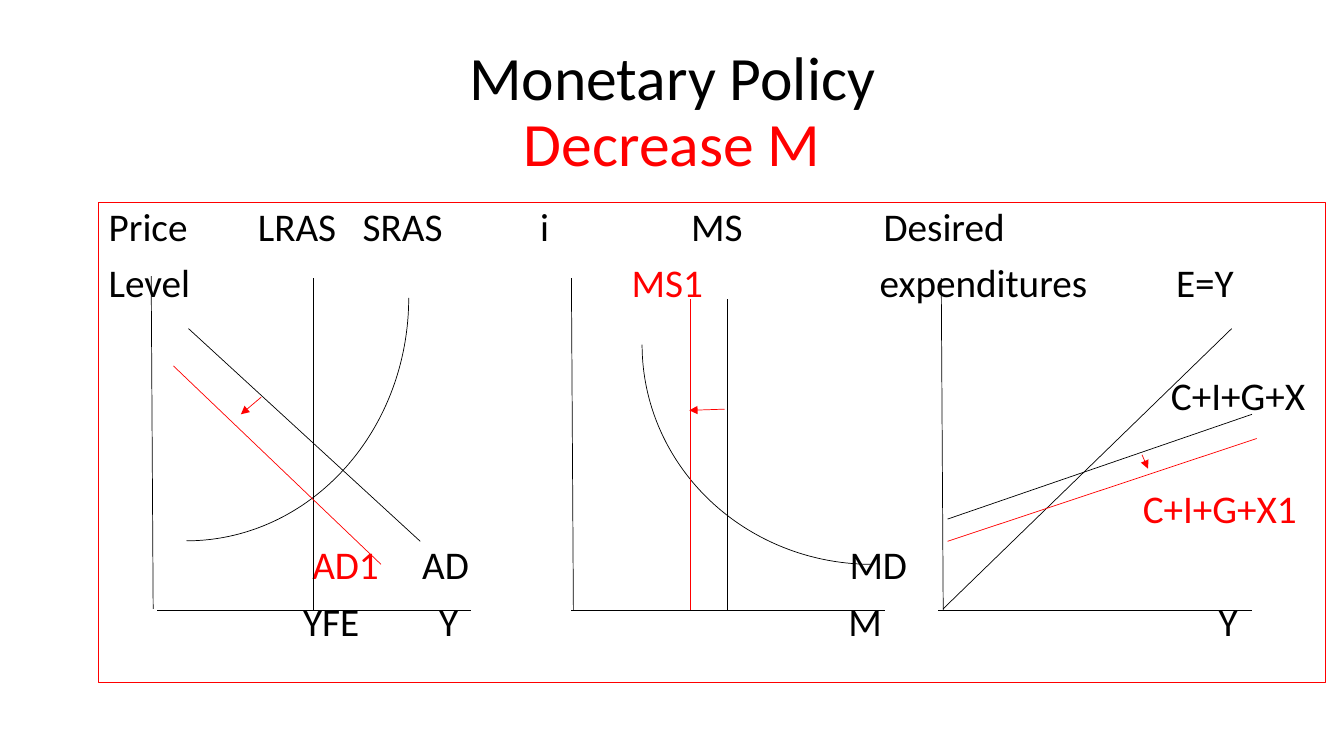
from lxml.etree import SubElement
from pptx import Presentation
from pptx.dml.color import RGBColor
from pptx.enum.shapes import MSO_CONNECTOR as Link, MSO_SHAPE as Kind
from pptx.enum.text import MSO_ANCHOR as Anchor, PP_ALIGN as Align
from pptx.oxml.ns import qn
from pptx.util import Cm, Pt

BLACK, RED, WHITE = "000000", "FF0000", "FFFFFF"
BASE = 15.39

ROWS = [
    (10, [(0, "Price", BLACK), (3.76, "LRAS", BLACK), (6.4, "SRAS", BLACK),
          (10.87, "i", BLACK), (14.68, "MS", BLACK), (19.53, "Desired", BLACK)]),
    (10, [(0, "Level", BLACK), (13.18, "MS1", RED),
          (19.43, "expenditures", BLACK), (26.9, "E=Y", BLACK)]),
    (50.3, [(26.77, "C+I+G+X", BLACK)]),
    (50.3, [(26.06, "C+I+G+X1", RED)]),
    (10, [(5.13, "AD1", RED), (7.9, "AD", BLACK), (18.67, "MD", BLACK)]),
    (10, [(4.9, "YFE", BLACK), (8.33, "Y", BLACK),
          (18.64, "M", BLACK), (27.97, "Y", BLACK)]),
]

AXES = [
    (3.81, 6.96, 3.86, 15.34), (14.4, 7.01, 14.45, BASE),
    (23.72, 7.01, 23.77, BASE),
    *[(left, BASE, left + 7.9, BASE) for left in (3.96, 14.4, 23.65)],
]
CURVES = [
    (7.9, 7.01, 7.9, BASE), (4.75, 8.28, 10.59, 13.64),
    (18.34, 7.54, 18.34, 15.37), (23.77, 15.34, 31.04, 8.28),
    (23.88, 13.08, 31.55, 10.44),
]
SHIFTED = [
    (4.37, 9.22, 9.6, 14.22), (23.88, 13.64, 31.67, 11.05),
    (17.4, 7.54, 17.4, 15.37),
]
ARROWS = [
    (6.58, 10.01, 6.07, 10.44), (18.26, 10.31, 17.37, 10.34),
    (28.78, 11.46, 28.93, 11.81),
]
ARCS = [(-1.42, 1.91, 12.24, 11.2, 90), (16.18, 3.15, 11.58, 11.07, 180)]


def paint(color, tone):
    color.rgb = RGBColor.from_string(tone)


def style(run, size, tone):
    run.font.name = "Calibri"
    run.font.size = Pt(size)
    paint(run.font.color, tone)


def stroke(line, tone, width):
    line.width = Pt(width)
    line.fill.solid()
    paint(line.color, tone)


def add_title(slide):
    box = slide.shapes.add_textbox(Cm(2.34), Cm(1.02), Cm(29.21), Cm(3.68))
    frame = box.text_frame
    frame.word_wrap = True
    frame.vertical_anchor = Anchor.MIDDLE
    para = frame.paragraphs[0]
    para.text = "Monetary Policy\vDecrease M"
    para.alignment = Align.CENTER
    para.line_spacing = 0.9
    for run, tone in zip(para.runs, (BLACK, RED)):
        style(run, 44, tone)


def add_row(para, gap, labels):
    para.alignment = Align.LEFT
    para.line_spacing = 0.9
    para.space_before = Pt(gap)
    tabs = SubElement(para._p.get_or_add_pPr(), qn("a:tabLst"))
    for place, text, tone in labels:
        run = para.add_run()
        run.text = text
        if place:
            SubElement(tabs, qn("a:tab"), pos=str(Cm(place)), algn="l")
            run.text = "\t" + text
        style(run, 28, tone)


def add_panel(slide):
    panel = slide.shapes.add_shape(
        Kind.RECTANGLE, Cm(2.49), Cm(5.11), Cm(30.91), Cm(12.09))
    panel.shadow.inherit = False
    panel.fill.solid()
    paint(panel.fill.fore_color, WHITE)
    stroke(panel.line, RED, 1)
    frame = panel.text_frame
    frame.word_wrap = True
    frame.vertical_anchor = Anchor.TOP
    for index, (gap, labels) in enumerate(ROWS):
        para = frame.add_paragraph() if index else frame.paragraphs[0]
        add_row(para, gap, labels)


def add_line(slide, ends, tone, arrow=False):
    link = slide.shapes.add_connector(Link.STRAIGHT, *map(Cm, ends))
    stroke(link.line, tone, 0.5)
    if arrow:
        SubElement(link.line._get_or_add_ln(), qn("a:tailEnd"), type="triangle")
    SubElement(link._element.spPr, qn("a:effectLst"))


def add_arc(slide, left, top, width, height, turn):
    arc = slide.shapes.add_shape(
        Kind.ARC, Cm(left), Cm(top), Cm(width), Cm(height))
    arc.rotation = turn
    arc.shadow.inherit = False
    arc.fill.background()
    stroke(arc.line, BLACK, 0.5)


def main():
    deck = Presentation()
    deck.slide_width, deck.slide_height = Cm(33.87), Cm(19.05)
    slide = deck.slides.add_slide(deck.slide_layouts[6])
    add_title(slide)
    add_panel(slide)
    for ends in AXES + CURVES:
        add_line(slide, ends, BLACK)
    for arc in ARCS:
        add_arc(slide, *arc)
    for ends in SHIFTED:
        add_line(slide, ends, RED)
    for ends in ARROWS:
        add_line(slide, ends, RED, arrow=True)
    deck.save("out.pptx")


if __name__ == "__main__":
    main()
